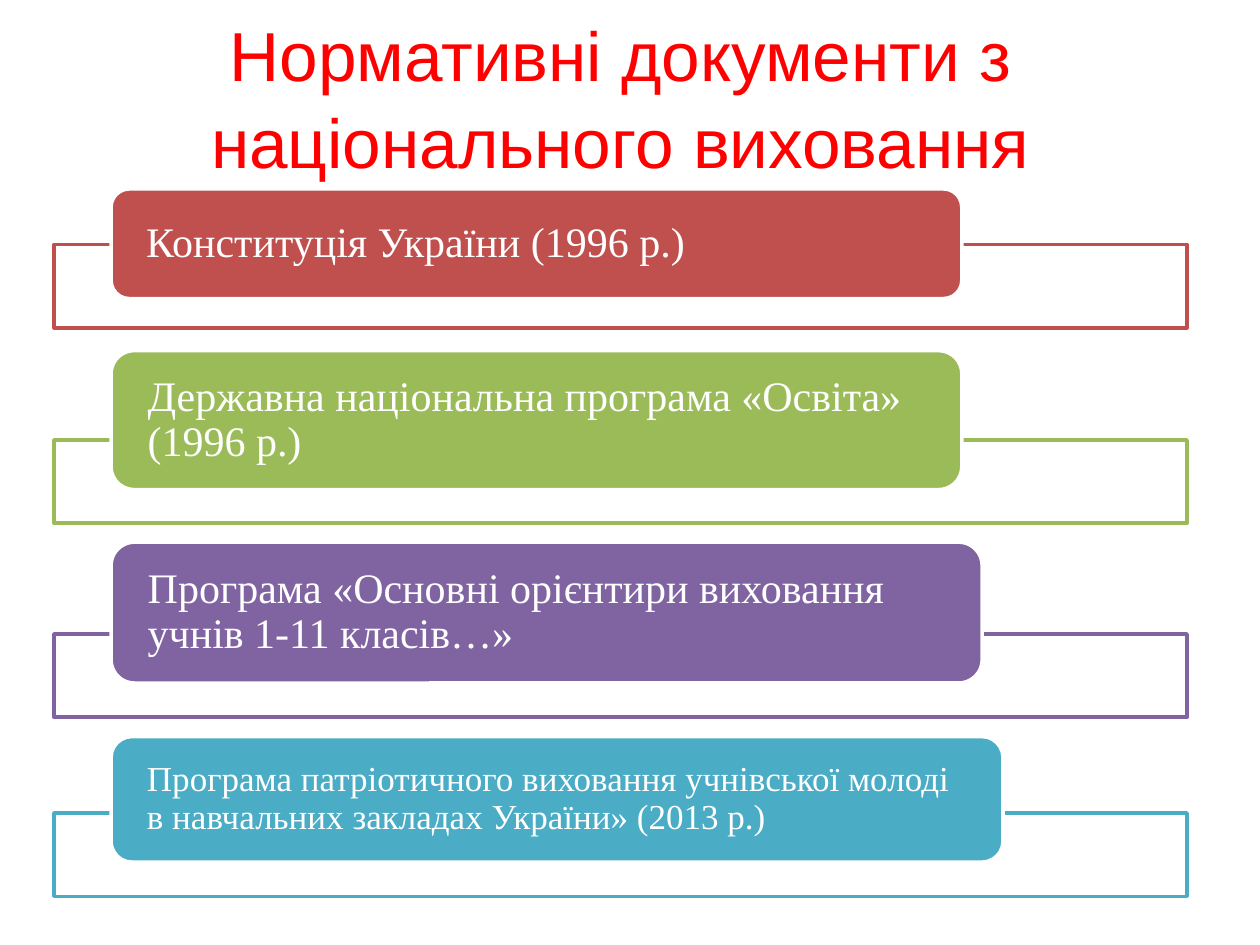
from pptx import Presentation
from pptx.dml.color import RGBColor
from pptx.enum.shapes import MSO_SHAPE as Shape
from pptx.enum.text import MSO_ANCHOR as Anchor, PP_ALIGN as Align
from pptx.util import Cm, Pt

COLOURS = {
    "white": "FFFFFF",
    "title": "FF0000",
    "red": "C0504D",
    "green": "9BBB59",
    "purple": "8064A2",
    "blue": "4BACC6",
}
LEFT, WIDTH = 1.09, 22.84
FRAME_HEIGHT = 1.68
CARD_INDENT = 1.15

DOCUMENTS = [
    ("Конституція України (1996 р.)", "red", 24, 3.81, 17.15, 2.21),
    ("Державна національна програма «Освіта» (1996 р.)", "green", 24, 7.07, 17.15, 2.8),
    ("Програма «Основні орієнтири виховання учнів 1-11 класів…»", "purple", 24, 10.93, 17.56, 2.84),
    ("Програма патріотичного виховання учнівської молоді в навчальних закладах України» (2013 р.)",
     "blue", 20, 14.85, 17.98, 2.53),
]
FRAME_TOPS = [4.93, 8.87, 12.78, 16.39]


def colour(name):
    return RGBColor.from_string(COLOURS[name])


def write(box, text, font, size, colour_name, align, spacing, side_margin):
    frame = box.text_frame
    frame.word_wrap = True
    frame.vertical_anchor = Anchor.MIDDLE
    frame.margin_left = frame.margin_right = Cm(side_margin)
    frame.margin_top = frame.margin_bottom = 0
    frame.text = text
    para = frame.paragraphs[0]
    para.alignment = align
    para.line_spacing = spacing
    span = para.runs[0]
    span.font.name = font
    span.font.size = Pt(size)
    span.font.color.rgb = colour(colour_name)


def add_title(page, left, top, width, height):
    box = page.shapes.add_textbox(Cm(left), Cm(top), Cm(width), Cm(height))
    write(box, "Нормативні документи з національного виховання",
          "Arial", 39.6, "title", Align.CENTER, 1.05, 0.25)


def add_panel(page, kind, left, top, width, height, fill, line):
    panel = page.shapes.add_shape(kind, Cm(left), Cm(top), Cm(width), Cm(height))
    panel.shadow.inherit = False
    panel.fill.solid()
    panel.fill.fore_color.rgb = colour(fill)
    panel.line.color.rgb = colour(line)
    panel.line.width = Pt(2)
    return panel


def add_document(page, left, width, frame_top, document):
    text, accent, size, card_top, card_width, card_height = document
    add_panel(page, Shape.RECTANGLE, left, frame_top, width, FRAME_HEIGHT, "white", accent)
    card = add_panel(page, Shape.ROUNDED_RECTANGLE, left + CARD_INDENT, card_top,
                     card_width, card_height, accent, "white")
    write(card, text, "Times New Roman", size, "white", Align.LEFT, 0.9, 0.6)


def main():
    deck = Presentation()
    deck.slide_width, deck.slide_height = Cm(25.4), Cm(19.05)
    page = deck.slides.add_slide(deck.slide_layouts[6])
    add_title(page, LEFT, 0.33, WIDTH, 3.18)
    for frame_top, document in zip(FRAME_TOPS, DOCUMENTS):
        add_document(page, LEFT, WIDTH, frame_top, document)
    deck.save("out.pptx")


if __name__ == "__main__":
    main()
